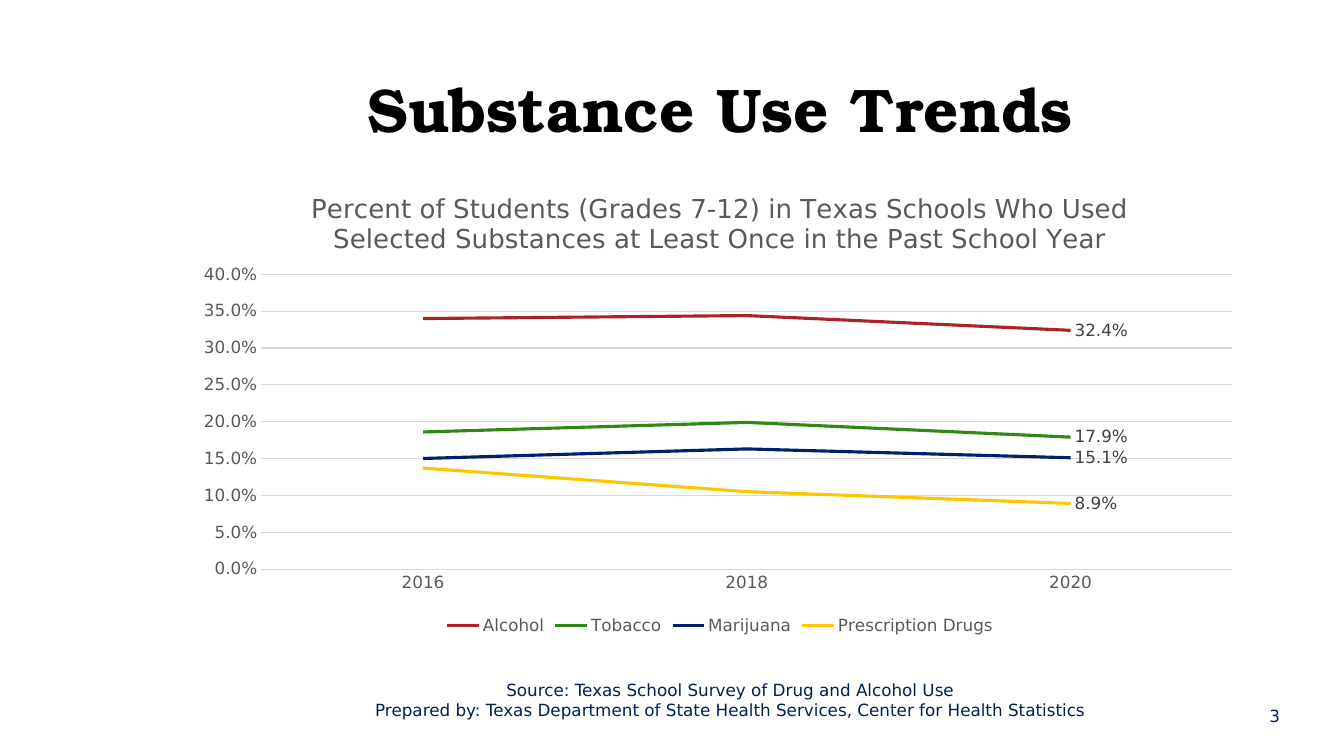
from lxml.etree import SubElement
from pptx import Presentation
from pptx.chart.data import CategoryChartData
from pptx.dml.color import RGBColor
from pptx.enum.chart import XL_CHART_TYPE, XL_LABEL_POSITION, XL_LEGEND_POSITION, XL_TICK_MARK
from pptx.enum.text import MSO_ANCHOR, PP_ALIGN
from pptx.oxml.ns import qn
from pptx.util import Cm, Pt

HEADING = "Substance Use Trends"
CHART_TITLE = ("Percent of Students (Grades 7-12) in Texas Schools Who Used "
               "Selected Substances at Least Once in the Past School Year")
YEARS = ["2016", "2018", "2020"]
SUBSTANCES = [
    ("Alcohol", "AB2328", (0.34, 0.344, 0.324)),
    ("Tobacco", "318814", (0.186, 0.199, 0.179)),
    ("Marijuana", "022167", (0.15, 0.163, 0.151)),
    ("Prescription Drugs", "FFC600", (0.137, 0.105, 0.089)),
]
SOURCE = [
    "Source: Texas School Survey of Drug and Alcohol Use",
    "Prepared by: Texas Department of State Health Services, Center for Health Statistics",
]
PAGE = "3"

COLORS = {"heading": "000000", "footer": "022151", "axis": "595959",
          "label": "404040", "grid": "D9D9D9"}
BODY_FONT, HEADING_FONT = "DejaVu Sans", "TeX Gyre Bonum"
PERCENT = "0.0%"
PLOT_AREA = {"x": 0.07, "y": 0.22, "w": 0.91, "h": 0.63}  # shares of the chart


def set_font(font, size, color, name=BODY_FONT, bold=False):
    font.size, font.name, font.bold = Pt(size), name, bold
    font.color.rgb = RGBColor.from_string(color)


def set_line(line, width, color):
    line.width = Pt(width)
    line.color.rgb = RGBColor.from_string(color)


def add_text(slide, box, lines, align, anchor, size, color, name=BODY_FONT,
             bold=False, spacing=1.0):
    frame = slide.shapes.add_textbox(*map(Cm, box)).text_frame
    frame.word_wrap = True
    frame.vertical_anchor = anchor
    frame.text = "\n".join(lines)
    for paragraph in frame.paragraphs:
        paragraph.alignment = align
        paragraph.line_spacing = spacing
        set_font(paragraph.font, size, color, name, bold)


def place_plot_area(chart):
    """Fix the inner plot area at the shares given in PLOT_AREA."""
    plot_area = chart._chartSpace.chart.plotArea
    layout = plot_area.find(qn("c:layout"))
    if layout is None:
        layout = SubElement(plot_area, qn("c:layout"))
        plot_area.insert(0, layout)
    manual = SubElement(layout, qn("c:manualLayout"))
    settings = [("layoutTarget", "inner"), ("xMode", "edge"), ("yMode", "edge")]
    for tag, value in settings + list(PLOT_AREA.items()):
        SubElement(manual, qn(f"c:{tag}")).set("val", str(value))


def add_trend_chart(slide, box):
    data = CategoryChartData(number_format=PERCENT)
    data.categories = YEARS
    for name, _, shares in SUBSTANCES:
        data.add_series(name, shares)
    chart = slide.shapes.add_chart(XL_CHART_TYPE.LINE, *map(Cm, box), data).chart
    set_font(chart.font, 10, COLORS["heading"])
    place_plot_area(chart)

    chart.has_title = True
    chart.chart_title.include_in_layout = False
    chart.chart_title.text_frame.text = CHART_TITLE
    set_font(chart.chart_title.text_frame.paragraphs[0].font, 18.6, COLORS["axis"])

    chart.has_legend = True
    chart.legend.position = XL_LEGEND_POSITION.BOTTOM
    chart.legend.include_in_layout = False
    set_font(chart.legend.font, 12, COLORS["axis"])

    years, shares = chart.category_axis, chart.value_axis
    for axis in (years, shares):
        axis.major_tick_mark = axis.minor_tick_mark = XL_TICK_MARK.NONE
        set_font(axis.tick_labels.font, 12, COLORS["axis"])
    set_line(years.format.line, 0.75, COLORS["grid"])
    shares.format.line.fill.background()
    shares.minimum_scale, shares.maximum_scale, shares.major_unit = 0, 0.4, 0.05
    shares.tick_labels.number_format = PERCENT
    shares.tick_labels.number_format_is_linked = False
    shares.has_major_gridlines = True
    set_line(shares.major_gridlines.format.line, 0.75, COLORS["grid"])

    plot = chart.plots[0]
    plot.vary_by_categories = False
    for series, (_, color, _) in zip(plot.series, SUBSTANCES):
        series.smooth = False
        set_line(series.format.line, 2.25, color)
        series.data_labels.show_value = False
        latest = series.points[len(YEARS) - 1].data_label
        set_font(latest.font, 12, COLORS["label"])
        latest.position = XL_LABEL_POSITION.RIGHT


def main():
    deck = Presentation()
    deck.slide_width, deck.slide_height = Cm(33.87), Cm(19.05)
    slide = deck.slides.add_slide(deck.slide_layouts[6])
    add_text(slide, (3.81, 0.76, 28.7, 3.05), [HEADING], PP_ALIGN.CENTER,
             MSO_ANCHOR.BOTTOM, 44, COLORS["heading"], HEADING_FONT, True, 0.9)
    add_trend_chart(slide, (4.7, 4.32, 26.9, 11.79))
    add_text(slide, (8.76, 17.12, 19.3, 1.02), SOURCE, PP_ALIGN.CENTER,
             MSO_ANCHOR.MIDDLE, 12, COLORS["footer"])
    add_text(slide, (29.97, 17.53, 2.54, 1.02), [PAGE], PP_ALIGN.RIGHT,
             MSO_ANCHOR.MIDDLE, 12, COLORS["footer"])
    deck.save("out.pptx")


if __name__ == "__main__":
    main()
